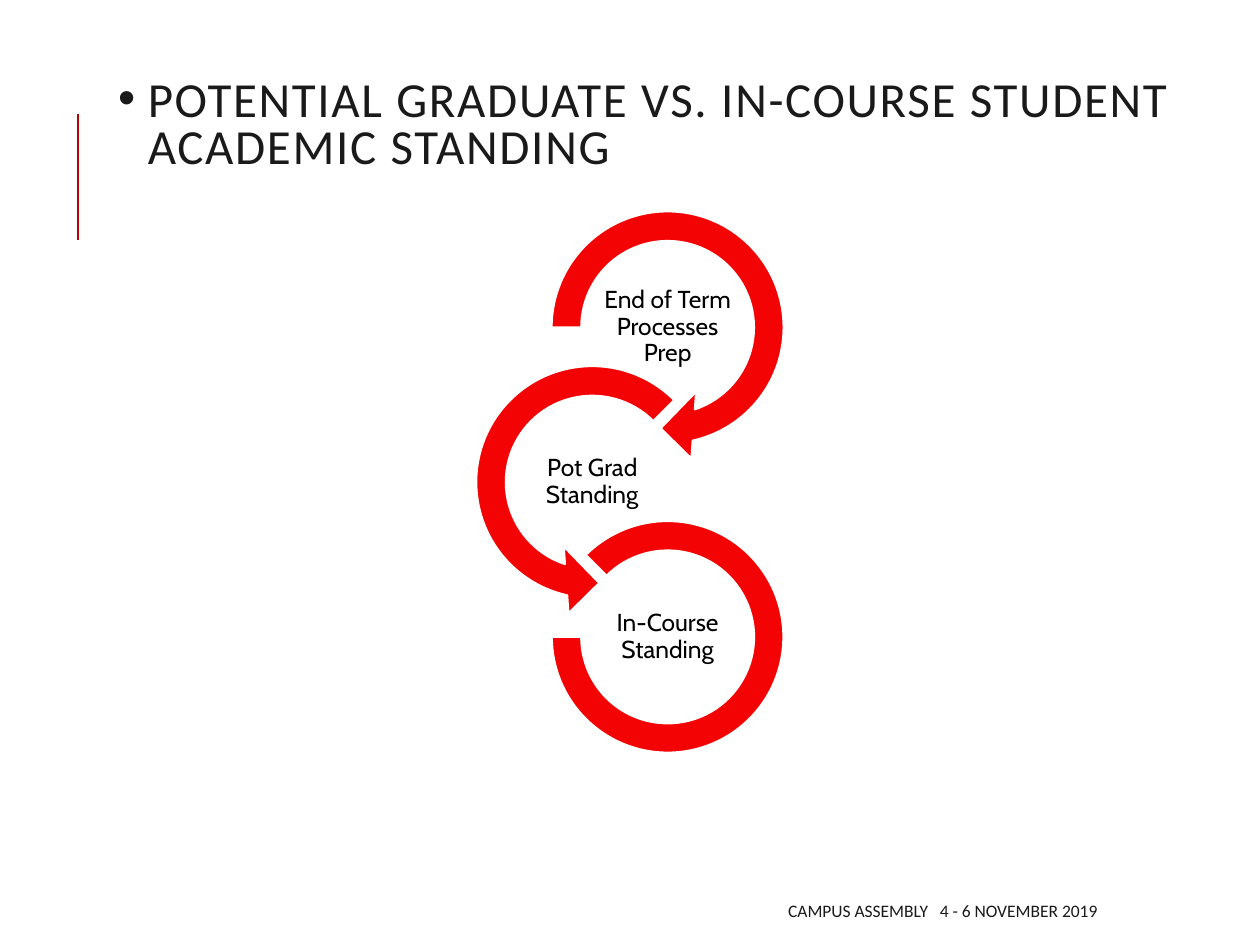
import pptx
import pptx.dml.color
import pptx.enum.shapes
import pptx.enum.text
import pptx.oxml
import pptx.oxml.ns
import pptx.util

Cm = pptx.util.Cm
SHAPE = pptx.enum.shapes.MSO_SHAPE
ALIGN = pptx.enum.text.PP_ALIGN
INK, RED, DARK_RED, WHITE, BLACK = "1A1A1A", "F30303", "B40404", "FFFFFF", "000000"

STEPS = [
    ("End of Term Processes Prep", SHAPE.CIRCULAR_ARROW, 5.44, (0.11, 11.423, 45, 108, 0.125)),
    ("Pot Grad Standing", SHAPE.LEFT_CIRCULAR_ARROW, 5.44, (0.11, 11.423, 63, 189, 0.125)),
    ("In-Course Standing", SHAPE.BLOCK_ARC, 4.67, (135, 108, 0.127)),
]


def color(value):
    """Return the RGB colour for a hex string."""
    return pptx.dml.color.RGBColor.from_string(value)


def add_text(s, text, x, y, w, h, size=14, font="Calibri", fill=INK,
             align=ALIGN.LEFT, spacing=1.0, inset=None):
    """Add a wrapped, vertically centred text box and return its paragraph."""
    tf = s.shapes.add_textbox(Cm(x), Cm(y), Cm(w), Cm(h)).text_frame
    tf.word_wrap = True
    tf.vertical_anchor = pptx.enum.text.MSO_ANCHOR.MIDDLE
    if inset is not None:
        tf.margin_left = tf.margin_right = tf.margin_top = tf.margin_bottom = Cm(inset)
    p = tf.paragraphs[0]
    p.alignment, p.line_spacing = align, spacing
    r = p.add_run()
    r.text = text
    r.font.size, r.font.name = pptx.util.Pt(size), font
    r.font.color.rgb = color(fill)
    return p


def add_title(s, x, y, w, h):
    """Add the bulleted title with the accent rule to its left."""
    rule_x, rule_y = x - 0.56, y + 0.66
    rule = s.shapes.add_connector(pptx.enum.shapes.MSO_CONNECTOR.STRAIGHT,
                                  Cm(rule_x), Cm(rule_y + 2.54), Cm(rule_x), Cm(rule_y))
    rule.line.color.rgb = color(DARK_RED)
    rule.line.width = pptx.util.Pt(1.5)
    rule._element.spPr.append(pptx.oxml.parse_xml(
        f'<a:effectLst {pptx.oxml.ns.nsdecls("a")}/>'))
    p = add_text(s, "POTENTIAL GRADUATE VS. IN-COURSE STUDENT ACADEMIC STANDING",
                 x, y, w, h, size=28, spacing=0.8)
    p.runs[0].font._element.set("spc", "100")
    pPr = p._p.get_or_add_pPr()
    pPr.set("marL", str(Cm(0.6)))
    pPr.set("indent", str(-Cm(0.6)))
    for bullet in ('buFont typeface="Arial"', 'buChar char="•"'):
        pPr.append(pptx.oxml.parse_xml(f'<a:{bullet} {pptx.oxml.ns.nsdecls("a")}/>'))


def add_cycle(s, x, y, w, h):
    """Add the chain of rings, alternating between the right and left side."""
    ring = STEPS[0][2]
    pitch = (h - ring) / (len(STEPS) - 1)
    label_w, label_h = 3.02, 1.5
    for i, (text, kind, size, adjustments) in enumerate(STEPS):
        cx = x + ring / 2 if i % 2 else x + w - ring / 2
        cy = y + ring / 2 + i * pitch
        sp = s.shapes.add_shape(kind, Cm(cx - size / 2), Cm(cy - size / 2), Cm(size), Cm(size))
        for n, value in enumerate(adjustments):
            sp.adjustments[n] = value
        sp.shadow.inherit = False
        sp.fill.solid()
        sp.fill.fore_color.rgb = color(RED)
        sp.line.color.rgb = color(WHITE)
        sp.line.width = pptx.util.Pt(1.25)
        add_text(s, text, cx - label_w / 2, cy - label_h / 2, label_w, label_h,
                 font="Cabin", fill=BLACK, align=ALIGN.CENTER, spacing=0.9, inset=0.03)


def add_footer(s, x, y, w, h):
    """Add the right-aligned event line."""
    add_text(s, "CAMPUS ASSEMBLY   4 - 6 NOVEMBER 2019", x, y, w, h, size=10, align=ALIGN.RIGHT)


def main():
    """Build and save the slide."""
    prs = pptx.Presentation()
    prs.slide_width, prs.slide_height = Cm(25.4), Cm(19.05)
    s = prs.slides.add_slide(prs.slide_layouts[6])
    add_title(s, 2.13, 1.63, 22.38, 1.85)
    add_footer(s, 10.08, 17.98, 12.29, 0.76)
    add_cycle(s, 9.22, 3.88, 6.96, 11.68)
    prs.save("out.pptx")


if __name__ == "__main__":
    main()
